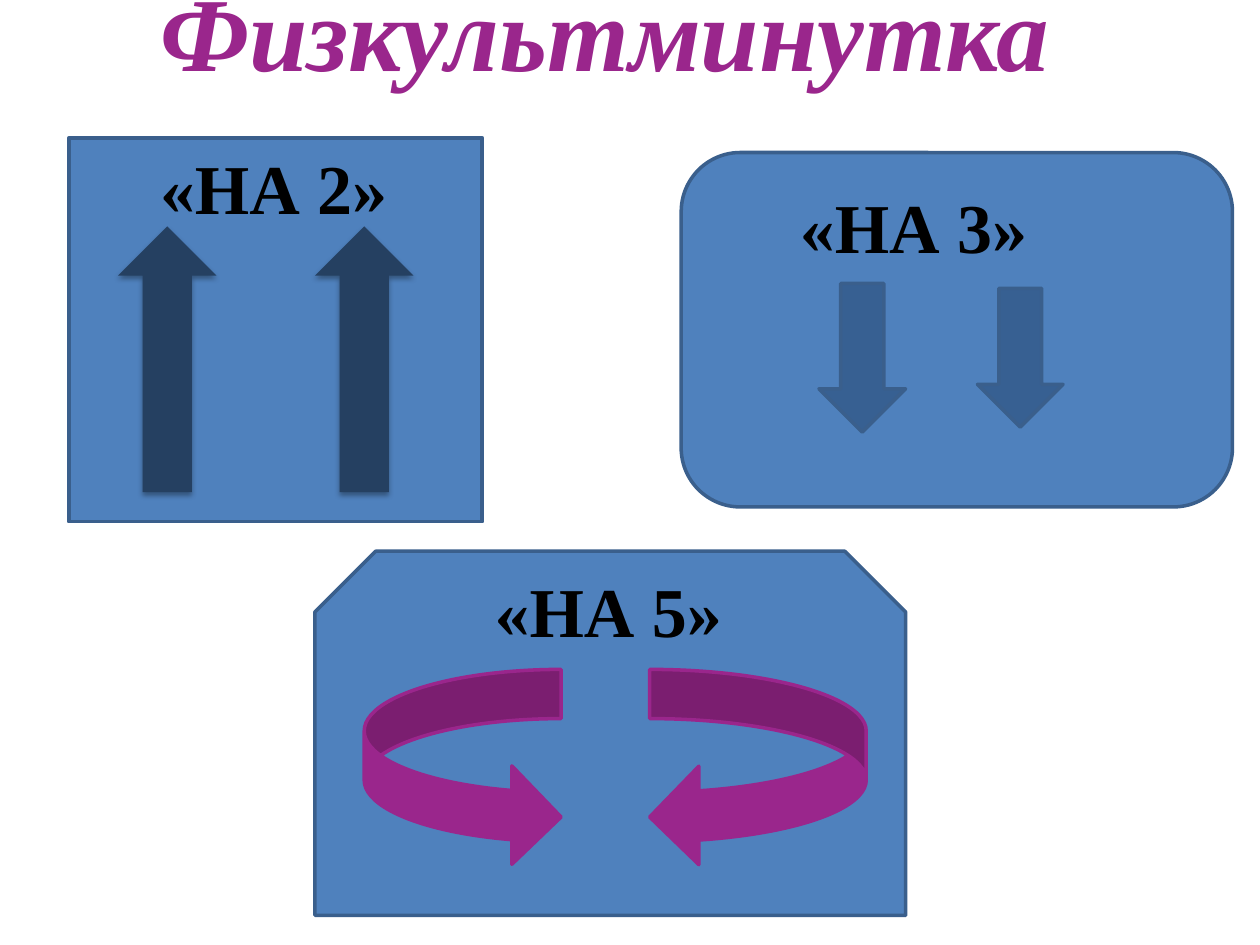
from lxml import etree
from pptx import Presentation
from pptx import util as u
from pptx.dml.color import RGBColor
from pptx.enum import shapes, text
from pptx.oxml.ns import qn

COLORS = {
    "panel": "4F81BD",
    "outline": "3A5F8C",
    "up": "254061",
    "down": "376092",
    "accent": "9A268C",
    "label": "000000",
}
KIND = shapes.MSO_SHAPE

presentation = Presentation()
presentation.slide_width = u.Inches(10)
presentation.slide_height = u.Inches(7.5)
slide = presentation.slides.add_slide(presentation.slide_layouts[6])

# Square grid of 64 columns by 48 rows
CELL = presentation.slide_width / 64


def add_figure(kind, box, fill, line=None):
    shape = slide.shapes.add_shape(kind, *(round(n * CELL) for n in box))
    shape.shadow.inherit = False
    shape.fill.solid()
    shape.fill.fore_color.rgb = RGBColor.from_string(COLORS[fill])
    if line:
        shape.line.color.rgb = RGBColor.from_string(COLORS[line])
        shape.line.width = u.Pt(2)
    else:
        shape.line.fill.background()
    return shape


def add_text(words, box, size, color, italic=False):
    textbox = slide.shapes.add_textbox(*(round(n * CELL) for n in box))
    frame = textbox.text_frame
    frame.word_wrap = True
    frame.auto_size = text.MSO_AUTO_SIZE.SHAPE_TO_FIT_TEXT
    paragraph = frame.paragraphs[0]
    paragraph.text = words
    font = paragraph.font
    font.name = "Times New Roman"
    font.size = u.Pt(size)
    font.bold = True
    font.italic = italic
    font.color.rgb = RGBColor.from_string(COLORS[color])


# Title
add_text("Физкультминутка", (7.5, -2, 50, 7.1), 60, "accent", italic=True)

# Panels
for kind, box in [
    (KIND.RECTANGLE, (3.5, 7, 21, 19.5)),
    (KIND.ROUNDED_RECTANGLE, (34.6, 7.75, 28, 18)),
    (KIND.SNIP_2_SAME_RECTANGLE, (16, 28, 30, 18.5)),
]:
    add_figure(kind, box, "panel", "outline")

# Panel labels
for number, left, top in [(2, 7.5, 7), (3, 40, 9), (5, 24.5, 28.5)]:
    add_text(f"«НА {number}»", (left, top, 14, 4.95), 40, "label")

# Up arrows with a soft shadow below
for left in (6, 16):
    arrow = add_figure(KIND.UP_ARROW, (left, 11.5, 5, 13.5), "up")
    effects = arrow._element.spPr.find(qn("a:effectLst"))
    shadow = etree.SubElement(
        effects, qn("a:outerShdw"), blurRad=str(u.Pt(3.1)),
        dist=str(u.Pt(1.8)), dir="5400000", rotWithShape="0")
    black = etree.SubElement(shadow, qn("a:srgbClr"), val="000000")
    etree.SubElement(black, qn("a:alpha"), val="35000")

# Curved arrows facing each other
add_figure(KIND.CURVED_RIGHT_ARROW, (18.5, 34, 10, 10), "accent", "accent")
add_figure(KIND.CURVED_LEFT_ARROW, (33, 34, 11, 10), "accent", "accent")

# Down arrows
for box in [(49.65, 14.65, 4.35, 7.05), (41.6, 14.4, 4.4, 7.55)]:
    add_figure(KIND.DOWN_ARROW, box, "down", "outline")

presentation.save("out.pptx")
